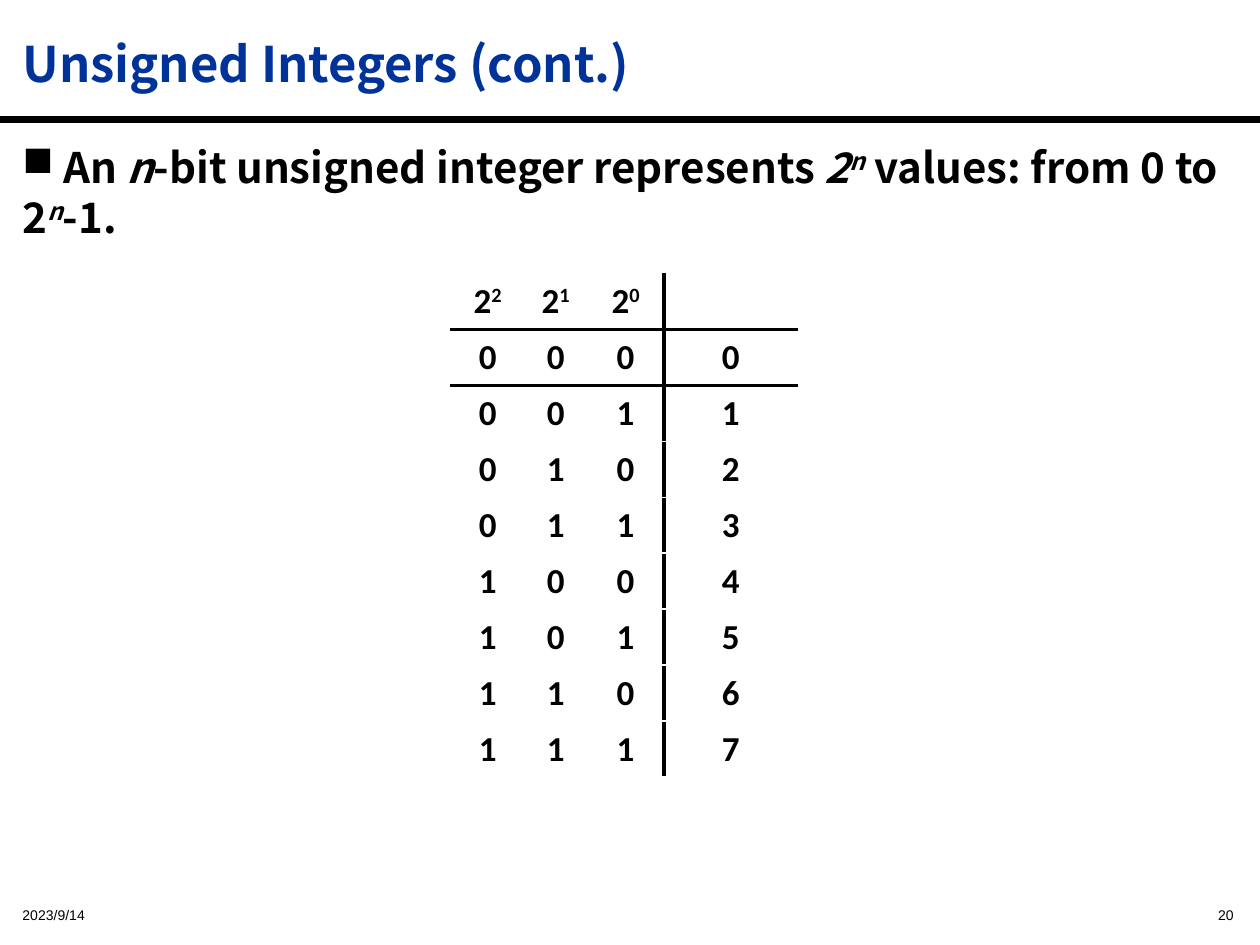
"""Build the slide on the value range of unsigned integers."""
from lxml import etree
from pptx import Presentation, util as u
from pptx.dml.color import RGBColor
from pptx.enum import shapes, text
from pptx.oxml.ns import qn

BLACK, BLUE = "000000", "003399"
HEADING, GRID, FOOTER = "Noto Sans CJK SC", "Calibri", "Arial"
BITS = 3


def color(value):
    """Turn a hex string into a colour."""
    return RGBColor.from_string(value)


def add_runs(para, runs, font, size, bold=True, tint=BLACK):
    """Add (wording, style) runs, where style holds i for italic and ^ for superscript."""
    for wording, style in runs:
        span = para.add_run()
        span.text = wording
        span.font.name, span.font.size = font, u.Pt(size)
        span.font.bold, span.font.italic = bold, "i" in style
        span.font.color.rgb = color(tint)
        properties = span.font._element
        etree.SubElement(properties, qn("a:ea")).set("typeface", font)
        if "^" in style:
            properties.set("baseline", "30000")


def add_text(page, place, runs, font, size, anchor=text.MSO_ANCHOR.MIDDLE,
             align=text.PP_ALIGN.LEFT, **look):
    """Add a wrapped text box and return its paragraph."""
    box = page.shapes.add_textbox(*map(u.Inches, place))
    box.text_frame.word_wrap = True
    box.text_frame.vertical_anchor = anchor
    para = box.text_frame.paragraphs[0]
    para.alignment = align
    add_runs(para, runs, font, size, **look)
    return para


def add_bullet(para, symbol):
    """Give a paragraph a bullet without a hanging indent."""
    properties = para._p.get_or_add_pPr()
    properties.set("marL", "0")
    properties.set("indent", "0")
    etree.SubElement(properties, qn("a:buChar")).set("char", symbol)


def add_rule(page, top):
    """Draw the thick rule across the slide."""
    rule = page.shapes.add_connector(shapes.MSO_CONNECTOR.STRAIGHT, 0, u.Inches(top),
                                     u.Inches(10), u.Inches(top))
    rule.line.color.rgb, rule.line.width = color(BLACK), u.Pt(3.75)
    etree.SubElement(rule._element.spPr, qn("a:effectLst"))


def add_borders(cell, sides):
    """Draw the named sides of a cell, in the order L, R, T, B."""
    properties = cell._tc.get_or_add_tcPr()
    for index, side in enumerate(side for side in "LRTB" if side in sides):
        line = etree.Element(qn(f"a:ln{side}"), w=str(u.Pt(2.25)))
        fill = etree.SubElement(line, qn("a:solidFill"))
        etree.SubElement(fill, qn("a:srgbClr")).set("val", BLACK)
        properties.insert(index, line)


def add_truth_table(page):
    """Add the table of bit patterns and their values."""
    header = [[("2", ""), (str(power), "^")] for power in reversed(range(BITS))] + [[]]
    rows = [header] + [[[(digit, "")] for digit in f"{value:0{BITS}b}{value}"]
                       for value in range(2 ** BITS)]
    frame = page.shapes.add_table(len(rows), BITS + 1, *map(u.Inches, (3.58, 2.17, 2.75, 4)))
    table = frame.table
    table.first_row = table.horz_banding = False
    for column, width in zip(table.columns, (0.58, 0.5, 0.61, 1.06)):
        column.width = u.Inches(width)
    for r, row in enumerate(rows):
        for c, runs in enumerate(row):
            cell = table.cell(r, c)
            cell.fill.background()
            cell.vertical_anchor = text.MSO_ANCHOR.MIDDLE
            para = cell.text_frame.paragraphs[0]
            para.alignment = text.PP_ALIGN.CENTER
            add_runs(para, runs, GRID, 20)
            sides = {0: "B", 1: "T"}.get(r, "") + {BITS - 1: "R", BITS: "L"}.get(c, "")
            add_borders(cell, sides)


def main():
    """Build and save the deck."""
    deck = Presentation()
    deck.slide_width, deck.slide_height = u.Inches(10), u.Inches(7.5)
    page = deck.slides.add_slide(deck.slide_layouts[6])
    add_rule(page, 0.95)
    add_text(page, (0.08, 7.13, 2.5, 0.27), [("2023/9/14", "")], FOOTER, 8, bold=False)
    add_text(page, (6.89, 7.13, 3, 0.27), [("20", "")], FOOTER, 8,
             align=text.PP_ALIGN.RIGHT, bold=False)
    add_text(page, (0.08, 0.08, 9.92, 0.84), [("Unsigned Integers (cont.)", "")],
             HEADING, 28, tint=BLUE)
    statement = [(" An ", ""), ("n", "i"), ("-bit unsigned integer represents ", ""),
                 ("2", "i"), ("n", "i^"), (" values: from 0 to 2", ""), ("n", "i^"),
                 ("-1.", "")]
    para = add_text(page, (0.08, 1.07, 9.92, 5.99), statement, HEADING, 24,
                    anchor=text.MSO_ANCHOR.TOP)
    para.space_before = u.Pt(4.8)
    add_bullet(para, "■")
    add_truth_table(page)
    deck.save("out.pptx")


if __name__ == "__main__":
    main()
